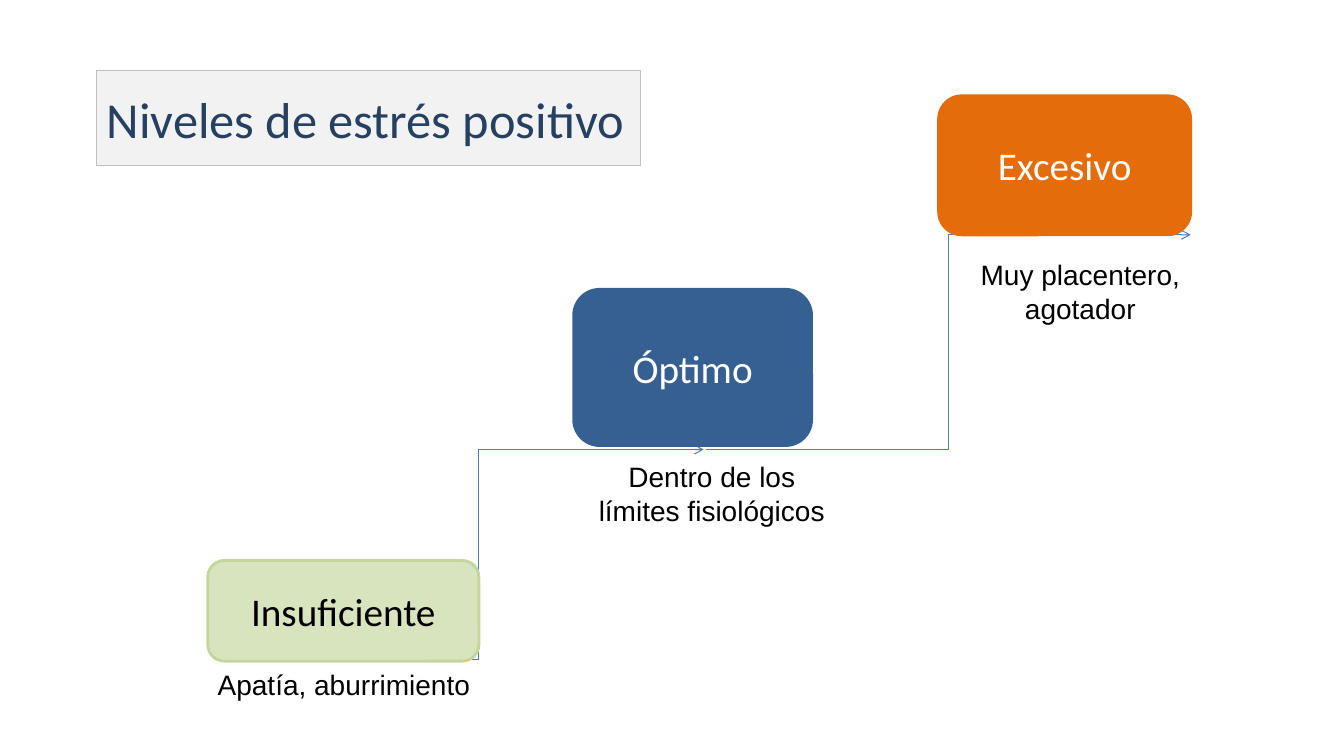
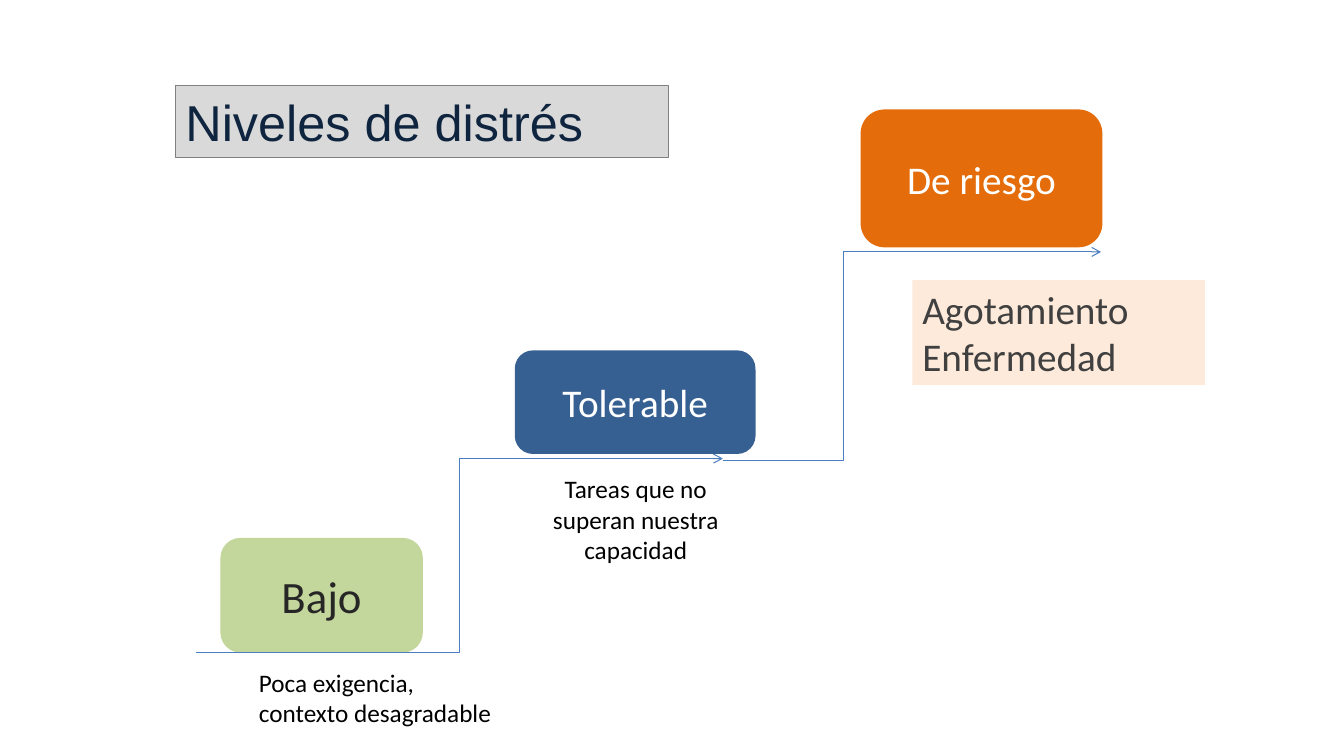
from lxml.etree import SubElement
from pptx import Presentation
from pptx.dml.color import RGBColor
from pptx.enum.shapes import MSO_CONNECTOR, MSO_SHAPE
from pptx.enum.text import MSO_ANCHOR, PP_ALIGN
from pptx.oxml.ns import qn
from pptx.util import Inches, Pt

SANS, BODY = "Arial", "Calibri"
BLACK, WHITE = "000000", "FFFFFF"
BLUE, ORANGE = "376092", "E46C0A"
LIME, PALE = "C3D69B", "D7E4BD"
ARROW = "4B7EBC"
LEFT, CENTER = PP_ALIGN.LEFT, PP_ALIGN.CENTER


def color(code):
    return RGBColor.from_string(code)


def paint(shape, fill, line=None, width=0.75):
    shape.fill.solid()
    shape.fill.fore_color.rgb = color(fill)
    if line:
        shape.line.color.rgb = color(line)
        shape.line.width = Pt(width)


def write(shape, lines, size, font, ink, align, anchor, wrap=True):
    frame = shape.text_frame
    frame.word_wrap = wrap
    frame.vertical_anchor = anchor
    for index, line in enumerate(lines):
        para = frame.add_paragraph() if index else frame.paragraphs[0]
        para.alignment = align
        run = para.add_run()
        run.text = line
        run.font.size = Pt(size)
        run.font.name = font
        run.font.color.rgb = color(ink)


def add_note(slide, place, lines, size, font, ink=BLACK, align=CENTER,
             wrap=True, anchor=MSO_ANCHOR.TOP):
    note = slide.shapes.add_textbox(*map(Inches, place))
    write(note, lines, size, font, ink, align, anchor, wrap)
    return note


def add_title(slide, place, text, font, ink, fill, line):
    title = add_note(slide, place, [text], 36, font, ink, LEFT,
                     anchor=MSO_ANCHOR.MIDDLE)
    paint(title, fill, line)


def add_level(slide, place, text, fill, line, ink=WHITE, size=28):
    level = slide.shapes.add_shape(MSO_SHAPE.ROUNDED_RECTANGLE,
                                   *map(Inches, place))
    level.shadow.inherit = False
    paint(level, fill, line, 2)
    write(level, [text], size, BODY, ink, CENTER, MSO_ANCHOR.MIDDLE)


def add_step(slide, ends, bend=0.5):
    step = slide.shapes.add_connector(MSO_CONNECTOR.ELBOW,
                                      *map(Inches, ends))
    step.line.color.rgb = color(ARROW)
    step.line.width = Pt(0.75)
    props = step.line._get_or_add_ln()
    SubElement(props, qn("a:tailEnd"), type="arrow")
    SubElement(props.getparent(), qn("a:effectLst"))
    guides = next(props.getparent().iter(qn("a:avLst")))
    SubElement(guides, qn("a:gd"), name="adj1",
               fmla=f"val {round(bend * 100000)}")


def build_good(slide):
    add_title(slide, (0.96, 0.7, 5.39, 0.94), "Niveles de estrés positivo",
              BODY, "254061", "F2F2F2", "BFBFBF")
    add_step(slide, (7, 4.46, 11.81, 2.33))
    add_step(slide, (2.52, 6.54, 6.98, 4.46))
    add_note(slide, (2.06, 6.57, 2.72, 0.44), ["Apatía, aburrimiento"],
             20, SANS, align=LEFT, wrap=False)
    add_note(slide, (9.62, 2.51, 2.19, 0.77), ["Muy placentero,", "agotador"],
             20, SANS, wrap=False)
    add_note(slide, (5.8, 4.51, 2.52, 0.77),
             ["Dentro de los límites fisiológicos"], 20, SANS)
    add_level(slide, (2.06, 5.56, 2.69, 1), "Insuficiente", PALE, LIME, BLACK)
    add_level(slide, (5.69, 2.87, 2.36, 1.55), "Óptimo", BLUE, BLUE)
    add_level(slide, (9.31, 0.95, 2.5, 1.38), "Excesivo", ORANGE, ORANGE)


def build_bad(slide):
    add_level(slide, (2.2, 5.35, 1.98, 1.11), "Bajo", LIME, LIME, "262626", 32)
    add_level(slide, (5.12, 3.49, 2.36, 1), "Tolerable", BLUE, BLUE)
    add_level(slide, (8.55, 1.1, 2.37, 1.34), "De riesgo", ORANGE, ORANGE)
    add_title(slide, (1.74, 0.85, 4.89, 0.71), "Niveles de distrés",
              SANS, "0F243E", "D9D9D9", "808080")
    add_step(slide, (1.94, 6.47, 7.17, 4.55))
    add_step(slide, (7.17, 4.57, 10.92, 2.5), 0.32)
    add_note(slide, (2.47, 6.57, 3.2, 0.71),
             ["Poca exigencia,", "contexto desagradable"], 18, BODY, align=LEFT)
    add_note(slide, (5.13, 4.65, 2.35, 1.01),
             ["Tareas que no superan nuestra capacidad"], 18, BODY)
    harm = add_note(slide, (9.05, 2.78, 2.9, 1.04),
                    ["Agotamiento", "Enfermedad"], 28, BODY, "404040", LEFT)
    paint(harm, "FDEADA")


def main():
    deck = Presentation()
    deck.slide_width, deck.slide_height = Inches(13.33), Inches(7.5)
    for build in (build_good, build_bad):
        build(deck.slides.add_slide(deck.slide_layouts[6]))
    deck.save("out.pptx")


if __name__ == "__main__":
    main()
